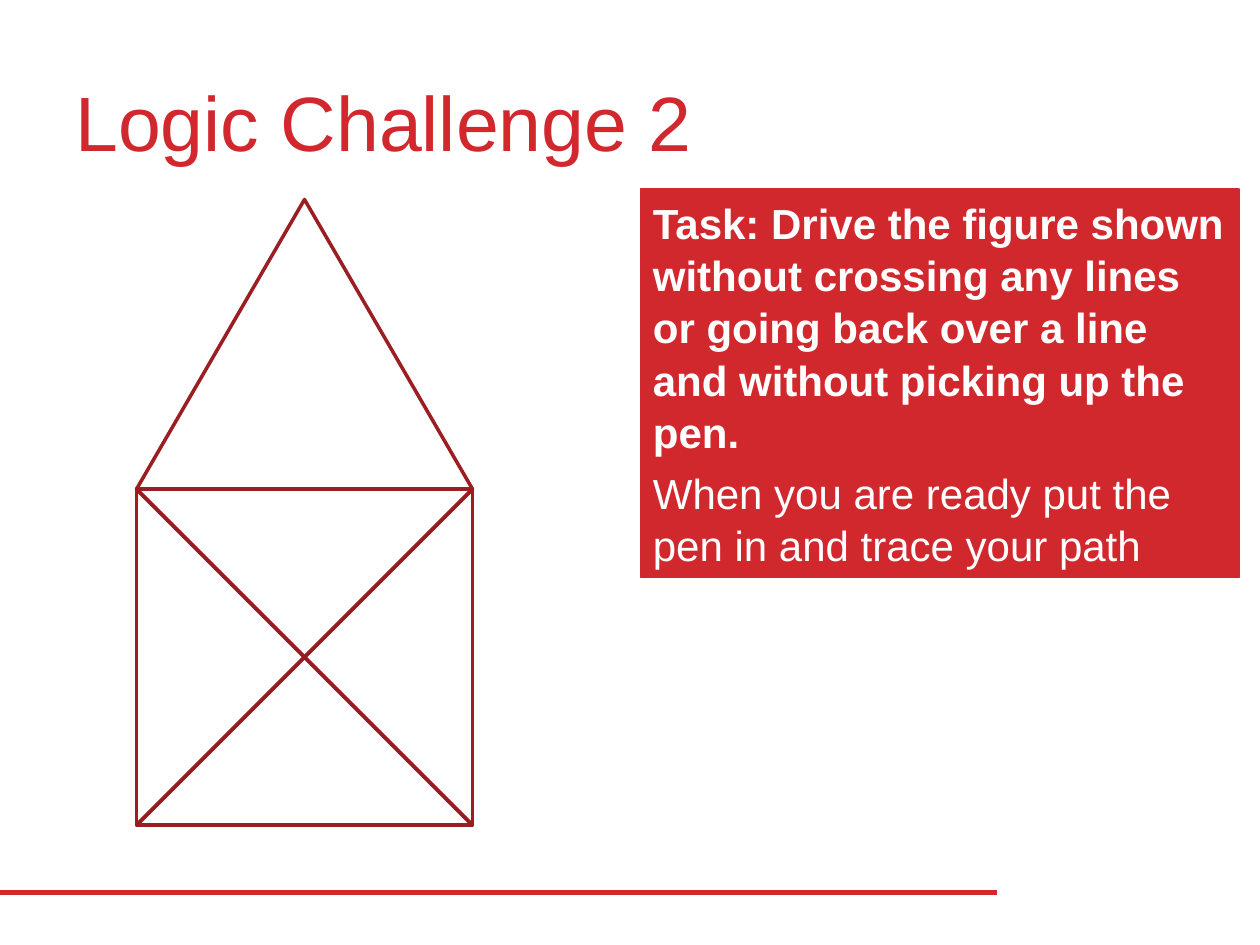
from typing import NamedTuple

from lxml import etree
from pptx import Presentation
from pptx.dml.color import RGBColor
from pptx.enum.shapes import MSO_CONNECTOR as Connector, MSO_SHAPE as Preset
from pptx.enum.text import MSO_ANCHOR as Anchor, PP_ALIGN as Align
from pptx.oxml.ns import qn
from pptx.util import Pt

RED, DARK_RED, DIAGONAL_RED, WHITE = "D1282E", "9B1E22", "991A1F", "FFFFFF"


class Box(NamedTuple):
    left: float
    top: float
    width: float
    height: float

    @property
    def right(self) -> float:
        return self.left + self.width

    @property
    def bottom(self) -> float:
        return self.top + self.height


class Stroke(NamedTuple):
    start: tuple[float, float]
    end: tuple[float, float]
    color: str
    weight: float


def paint(target, color: str) -> None:
    """Give a fill, line or font colour format a hex colour."""
    target.rgb = RGBColor.from_string(color)


def draw_line(slide, stroke: Stroke) -> None:
    ends = [Pt(value) for value in (*stroke.start, *stroke.end)]
    line = slide.shapes.add_connector(Connector.STRAIGHT, *ends)
    paint(line.line.color, stroke.color)
    line.line.width = Pt(stroke.weight)
    properties = line._element.find(qn("p:spPr"))
    etree.SubElement(properties, qn("a:effectLst"))


def draw_shape(slide, preset, box: Box, line: str, weight: float, fill: str = ""):
    shape = slide.shapes.add_shape(preset, *map(Pt, box))
    shape.shadow.inherit = False
    if fill:
        shape.fill.solid()
        paint(shape.fill.fore_color, fill)
    else:
        shape.fill.background()
    paint(shape.line.color, line)
    shape.line.width = Pt(weight)
    return shape


def write(frame, text: str, *, size: float, color: str, bold: bool = False,
          before: float = 0, spacing: float = 1, first: bool = False) -> None:
    paragraph = frame.paragraphs[0] if first else frame.add_paragraph()
    paragraph.alignment = Align.LEFT
    paragraph.space_before = Pt(before)
    paragraph.line_spacing = spacing
    run = paragraph.add_run()
    run.text = text
    run.font.name = "Arial"
    run.font.size = Pt(size)
    run.font.bold = bold
    paint(run.font.color, color)


def main() -> None:
    deck = Presentation()
    deck.slide_width, deck.slide_height = Pt(720), Pt(540)
    slide = deck.slides.add_slide(deck.slide_layouts[6])

    # Footer rule
    draw_line(slide, Stroke((0, 510), (570, 510), RED, 3))

    # Task panel
    panel = draw_shape(slide, Preset.RECTANGLE, Box(366, 108, 342, 222), RED, 0.75, RED)
    task = panel.text_frame
    task.word_wrap = True
    task.vertical_anchor = Anchor.TOP
    write(task, "Task: Drive the figure shown without crossing any lines or going "
          "back over a line and without picking up the pen.",
          size=24, color=WHITE, bold=True, spacing=1.04, first=True)
    write(task, "When you are ready put the pen in and trace your path",
          size=24, color=WHITE, before=4.8, spacing=1.04)

    # Title
    heading = slide.shapes.add_textbox(*map(Pt, Box(36, 24, 648, 90))).text_frame
    heading.word_wrap = True
    heading.vertical_anchor = Anchor.MIDDLE
    write(heading, "Logic Challenge 2", size=44, color=RED, first=True)

    # House: square walls, a roof on top and two diagonals
    walls = Box(78, 279.5, 192, 192)
    roof_height = 165.5
    roof = Box(walls.left, walls.top - roof_height, walls.width, roof_height)
    draw_shape(slide, Preset.RECTANGLE, walls, DARK_RED, 2)
    draw_shape(slide, Preset.ISOSCELES_TRIANGLE, roof, DARK_RED, 2)
    for start, end in ((walls.left, walls.right), (walls.right, walls.left)):
        draw_line(slide, Stroke((start, walls.bottom), (end, walls.top), DIAGONAL_RED, 2.25))

    deck.save("out.pptx")


if __name__ == "__main__":
    main()
